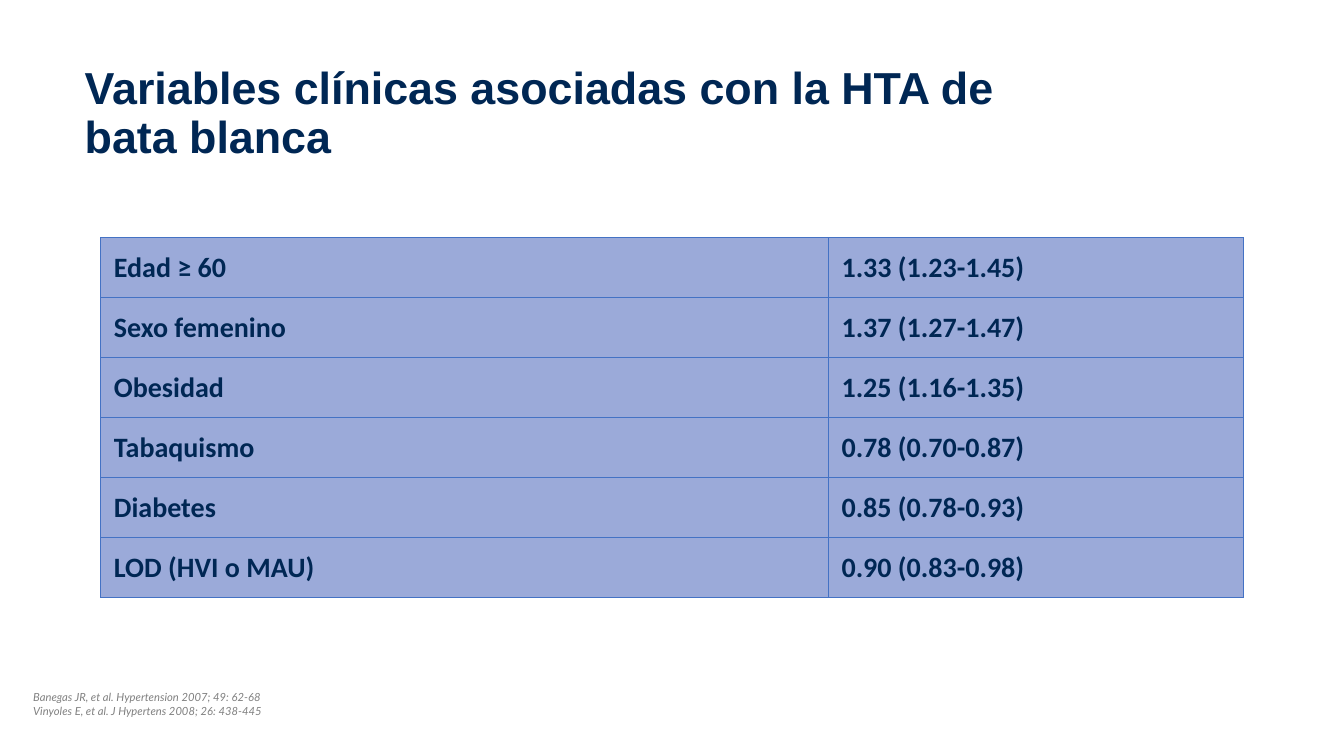
"""Build the slide on clinical variables linked to white coat hypertension."""
from dataclasses import dataclass
from typing import Any, NamedTuple

from lxml import etree
from pptx import Presentation
from pptx.dml.color import RGBColor
from pptx.enum.text import MSO_ANCHOR, MSO_AUTO_SIZE, PP_ALIGN
from pptx.oxml.ns import qn
from pptx.util import Inches, Pt

MIDDLE, TOP = MSO_ANCHOR.MIDDLE, MSO_ANCHOR.TOP
LEFT = PP_ALIGN.LEFT
FIXED, GROW = MSO_AUTO_SIZE.NONE, MSO_AUTO_SIZE.SHAPE_TO_FIT_TEXT
WIDE, HIGH = Inches(13.33), Inches(7.5)


@dataclass(frozen=True)
class Theme:
    """Colours, fonts and sizes of the slide."""
    navy: str = "002754"
    grey: str = "808080"
    fill: str = "9BAAD9"
    edge: str = "4472C4"
    rule: float = 0.5
    head: tuple[str, int] = ("Arial", 32)
    body: tuple[str, int] = ("Calibri", 20)
    note: tuple[str, int] = ("Lato", 8)


class Area(NamedTuple):
    """A box given in percent of the slide's width and height."""
    left: float
    top: float
    width: float
    height: float

    def place(self) -> tuple[int, int, int, int]:
        """Return the box in slide units."""
        return (int(WIDE * self.left / 100), int(HIGH * self.top / 100),
                int(WIDE * self.width / 100), int(HIGH * self.height / 100))


class Factor(NamedTuple):
    """A clinical variable and its odds ratio with interval."""
    name: str
    ratio: str


THEME = Theme()
TITLE = "Variables clínicas asociadas con la HTA de bata blanca"
FACTORS = [
    Factor("Edad ≥ 60", "1.33 (1.23-1.45)"),
    Factor("Sexo femenino", "1.37 (1.27-1.47)"),
    Factor("Obesidad", "1.25 (1.16-1.35)"),
    Factor("Tabaquismo", "0.78 (0.70-0.87)"),
    Factor("Diabetes", "0.85 (0.78-0.93)"),
    Factor("LOD (HVI o MAU)", "0.90 (0.83-0.98)"),
]
SOURCES = ["Banegas JR, et al. Hypertension 2007; 49: 62-68",
           "Vinyoles E, et al. J Hypertens 2008; 26: 438-445"]
HEAD_AREA = Area(5.55, 6.8, 72.62, 16.67)
GRID_AREA = Area(7.5, 31.45, 85, 47.6)
NOTE_AREA = Area(1.73, 90.67, 39, 4.93)
SHARES = (0.637, 0.363)


def apply(item: Any, values: dict[str, Any]) -> None:
    """Set each attribute from a dict of format values."""
    for key, value in values.items():
        setattr(item, key, value)


def write(frame: Any, lines: list[str], face: tuple[str, int],
          tint: str, **style: bool) -> None:
    """Write lines as paragraphs in one type style."""
    frame.text = "\n".join(lines)
    for para in frame.paragraphs:
        para.alignment = LEFT
        apply(para.font, {"name": face[0], "size": Pt(face[1]), **style})
        para.font.color.rgb = RGBColor.from_string(tint)


def border(cell: Any) -> None:
    """Draw a thin line on all four sides of a cell."""
    props = cell._tc.get_or_add_tcPr()
    for spot, side in enumerate(("lnL", "lnR", "lnT", "lnB")):
        line = etree.Element(qn(f"a:{side}"), w=str(Pt(THEME.rule)))
        solid = etree.SubElement(line, qn("a:solidFill"))
        etree.SubElement(solid, qn("a:srgbClr"), val=THEME.edge)
        props.insert(spot, line)


def add_title(slide: Any) -> None:
    """Move and format the title placeholder."""
    title = slide.shapes.title
    apply(title, dict(zip(("left", "top", "width", "height"),
                          HEAD_AREA.place())))
    frame = title.text_frame
    write(frame, [TITLE], THEME.head, THEME.navy, bold=True)
    apply(frame, {"vertical_anchor": MIDDLE, "word_wrap": True,
                  "auto_size": FIXED})
    frame.paragraphs[0].line_spacing = 0.9


def add_grid(slide: Any) -> None:
    """Add the table of factors and ratios."""
    box = GRID_AREA.place()
    table = slide.shapes.add_table(len(FACTORS), len(SHARES), *box).table
    apply(table, {"first_row": False, "horz_banding": False})
    for col, share in zip(table.columns, SHARES):
        col.width = int(box[2] * share)
    for row, factor in zip(table.rows, FACTORS):
        row.height = box[3] // len(FACTORS)
        for cell, text in zip(row.cells, factor):
            write(cell.text_frame, [text], THEME.body, THEME.navy, bold=True)
            apply(cell, {"vertical_anchor": MIDDLE,
                         "margin_left": Inches(0.13),
                         "margin_right": Inches(0.13),
                         "margin_top": Inches(0.04),
                         "margin_bottom": Inches(0.04)})
            cell.fill.solid()
            cell.fill.fore_color.rgb = RGBColor.from_string(THEME.fill)
            border(cell)


def add_note(slide: Any) -> None:
    """Add the cited sources at the foot."""
    frame = slide.shapes.add_textbox(*NOTE_AREA.place()).text_frame
    write(frame, SOURCES, THEME.note, THEME.grey, italic=True)
    apply(frame, {"word_wrap": True, "vertical_anchor": TOP,
                  "auto_size": GROW})


def main() -> None:
    """Build and save the slide."""
    deck = Presentation()
    apply(deck, {"slide_width": WIDE, "slide_height": HIGH})
    slide = deck.slides.add_slide(deck.slide_layouts[5])
    add_title(slide)
    add_grid(slide)
    add_note(slide)
    deck.save("out.pptx")


if __name__ == "__main__":
    main()
